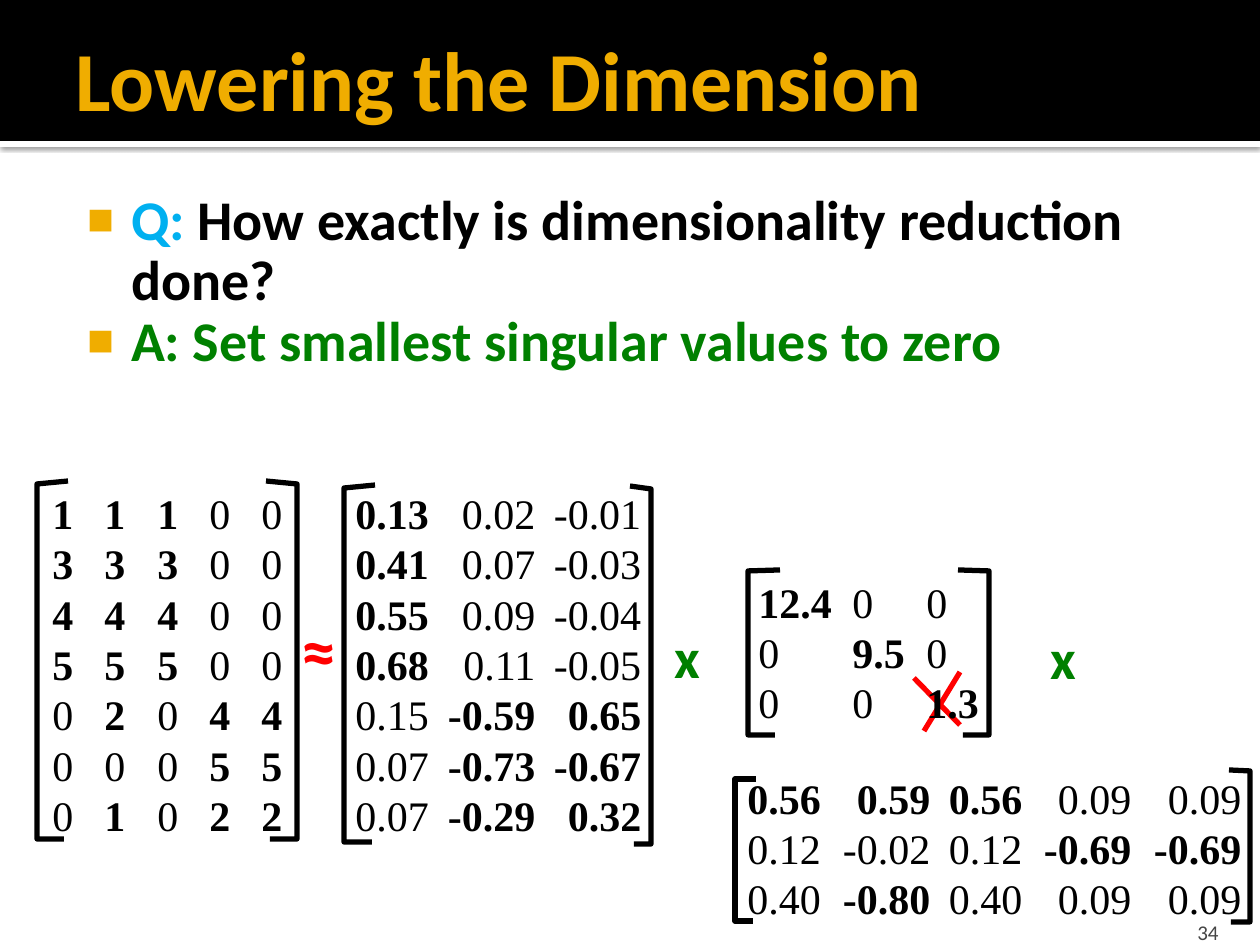
"""Build the slide on lowering the dimension with singular values."""
from lxml import etree
from pptx import Presentation
from pptx.dml.color import RGBColor
from pptx.enum.shapes import MSO_CONNECTOR, MSO_SHAPE
from pptx.enum.text import MSO_ANCHOR as ANCHOR, MSO_AUTO_SIZE as FIT, PP_ALIGN as ALIGN
from pptx.oxml import parse_xml
from pptx.oxml.ns import nsdecls, qn
from pptx.util import Pt

PX = 914400 / 126


def px(*values):
    return [round(v * PX) for v in values]


def rgb(color):
    return RGBColor.from_string(color)


prs = Presentation()
prs.slide_width, prs.slide_height = px(1260, 945)
s = prs.slides.add_slide(prs.slide_layouts[1])

for i, (y, h, color) in enumerate([(141, 6, "FFFFFF"), (0, 141, "000000")]):
    sp = s.shapes.add_shape(MSO_SHAPE.RECTANGLE, *px(0, y, 1260, h))
    sp.shadow.inherit = False
    sp.fill.solid()
    sp.fill.fore_color.rgb = rgb(color)
    sp.line.fill.background()
    s.shapes._spTree.insert(2 + i, sp._element)
    if color == "FFFFFF":
        sp._element.spPr.find(qn("a:effectLst")).append(parse_xml(
            f'<a:outerShdw {nsdecls("a")} blurRad="31750" dist="10160" dir="5400000">'
            '<a:srgbClr val="000000"><a:alpha val="60000"/></a:srgbClr></a:outerShdw>'))

title = s.shapes.title
title.left, title.top, title.width, title.height = px(63, 10, 1197, 136)
tf = title.text_frame
tf.text = "Lowering the Dimension"
tf.auto_size, tf.vertical_anchor = FIT.NONE, ANCHOR.MIDDLE
p = tf.paragraphs[0]
p.alignment = ALIGN.LEFT
p.font.name, p.font.size, p.font.bold = "Calibri", Pt(48), True
p.font.color.rgb = rgb("F0AD00")

body = s.placeholders[1]
body.left, body.top, body.width, body.height = px(63, 179, 1176, 724)
tf = body.text_frame
tf.auto_size = FIT.NONE
tf.margin_left, tf.margin_top = px(8, 13)
bullets = [
    [("Q: ", "00B0F0"), ("How exactly is dimensionality reduction done?", "000000")],
    [("A: Set smallest singular values to zero", "008000")],
]
for i, runs in enumerate(bullets):
    p = tf.add_paragraph() if i else tf.paragraphs[0]
    p.line_spacing, p.space_before = 0.9, Pt(0)
    p.font.name, p.font.size, p.font.bold = "Calibri", Pt(32), True
    for text, color in runs:
        r = p.add_run()
        r.text = text
        r.font.color.rgb = rgb(color)
    pPr = p._p.get_or_add_pPr()
    indent, hang = px(60, -44)
    pPr.set("marL", str(indent))
    pPr.set("indent", str(hang))
    marks = [f'<a:buClr {nsdecls("a")}><a:srgbClr val="F0AD00"/></a:buClr>',
             f'<a:buSzPct {nsdecls("a")} val="80000"/>',
             f'<a:buChar {nsdecls("a")} char="■"/>']
    at = list(pPr).index(pPr.find(qn("a:defRPr")))
    for k, mark in enumerate(marks):
        pPr.insert(at + k, parse_xml(mark))

for x1, y1, x2, y2 in [(924, 731, 960, 672), (914, 678, 960, 725)]:
    cross = s.shapes.add_connector(MSO_CONNECTOR.STRAIGHT, *px(x1, y1, x2, y2))
    cross.line.color.rgb = rgb("FF0000")
    cross.line.width = Pt(3)
    etree.SubElement(cross._element.spPr, qn("a:effectLst"))

brackets = [
    (68, 37, 64, 481, 484, 839), (266, 297, 270, 481, 484, 839),
    (375, 344, 372, 485, 488, 842), (630, 651, 634, 486, 489, 844),
    (780, 748, 775, 570, 571, 735), (958, 989, 963, 570, 571, 735),
    (756, 735, 753, 779, 779, 921), (1229, 1250, 1231, 770, 771, 922),
]
for tip, back, foot, top, corner, bottom in brackets:
    fb = s.shapes.build_freeform(tip, top, scale=PX)
    fb.add_line_segments([(back, corner), (back, bottom), (foot, bottom)], close=False)
    sp = fb.convert_to_shape()
    sp.shadow.inherit = False
    sp.fill.background()
    sp.line.color.rgb = rgb("000000")
    sp.line.width = Pt(3)

matrices = [
    ((40, 481, 264, 369), "l", (52, 105, 157, 209),
     ["*1 *1 *1 0 0", "*3 *3 *3 0 0", "*4 *4 *4 0 0", "*5 *5 *5 0 0",
      "0 *2 0 *4 *4", "0 0 0 *5 *5", "0 *1 0 *2 *2"]),
    ((343, 481, 330, 369), "r", (180, 286),
     ["*0.13 0.02 -0.01", "*0.41 0.07 -0.03", "*0.55 0.09 -0.04", "*0.68 0.11 -0.05",
      "0.15 *-0.59 *0.65", "0.07 *-0.73 *-0.67", "0.07 *-0.29 *0.32"]),
    ((746, 570, 273, 165), "l", (94, 168), ["*12.4 0 0", "0 *9.5 0", "0 0 *1.3"]),
    ((735, 766, 525, 165), "r", (183, 275, 384, 494),
     ["*0.56 *0.59 *0.56 0.09 0.09", "0.12 -0.02 0.12 *-0.69 *-0.69",
      "0.40 *-0.80 0.40 0.09 0.09"]),
]
for box, align, stops, rows in matrices:
    tf = s.shapes.add_textbox(*px(*box)).text_frame
    tf.word_wrap = True
    for i, row in enumerate(rows):
        p = tf.add_paragraph() if i else tf.paragraphs[0]
        p.font.name, p.font.size = "Times New Roman", Pt(24)
        p.font.color.rgb = rgb("000000")
        tabs = etree.Element(qn("a:tabLst"))
        for stop in px(*stops):
            etree.SubElement(tabs, qn("a:tab"), pos=str(stop), algn=align)
        p._p.pPr.insert(0, tabs)
        for j, value in enumerate(row.split()):
            r = p.add_run()
            r.text = ("\t" if j else "") + value.lstrip("*")
            r.font.bold = value.startswith("*")

labels = [
    ("x", (662, 616, 55, 81), 32, "008000", True, ALIGN.LEFT, ANCHOR.MIDDLE),
    ("x", (1038, 617, 55, 81), 32, "008000", True, ALIGN.LEFT, ANCHOR.MIDDLE),
    ("≈", (289, 600, 64, 97), 40, "FF0000", True, ALIGN.LEFT, ANCHOR.MIDDLE),
    ("34", (1130, 907, 101, 38), 12, "454545", False, ALIGN.RIGHT, ANCHOR.BOTTOM),
]
for text, box, size, color, bold, align, anchor in labels:
    tf = s.shapes.add_textbox(*px(*box)).text_frame
    tf.text = text
    tf.word_wrap, tf.vertical_anchor = True, anchor
    if anchor == ANCHOR.BOTTOM:
        tf.margin_bottom = 0
    p = tf.paragraphs[0]
    p.alignment = align
    p.font.name, p.font.size, p.font.bold = "Calibri", Pt(size), bold
    p.font.color.rgb = rgb(color)

prs.save("out.pptx")
